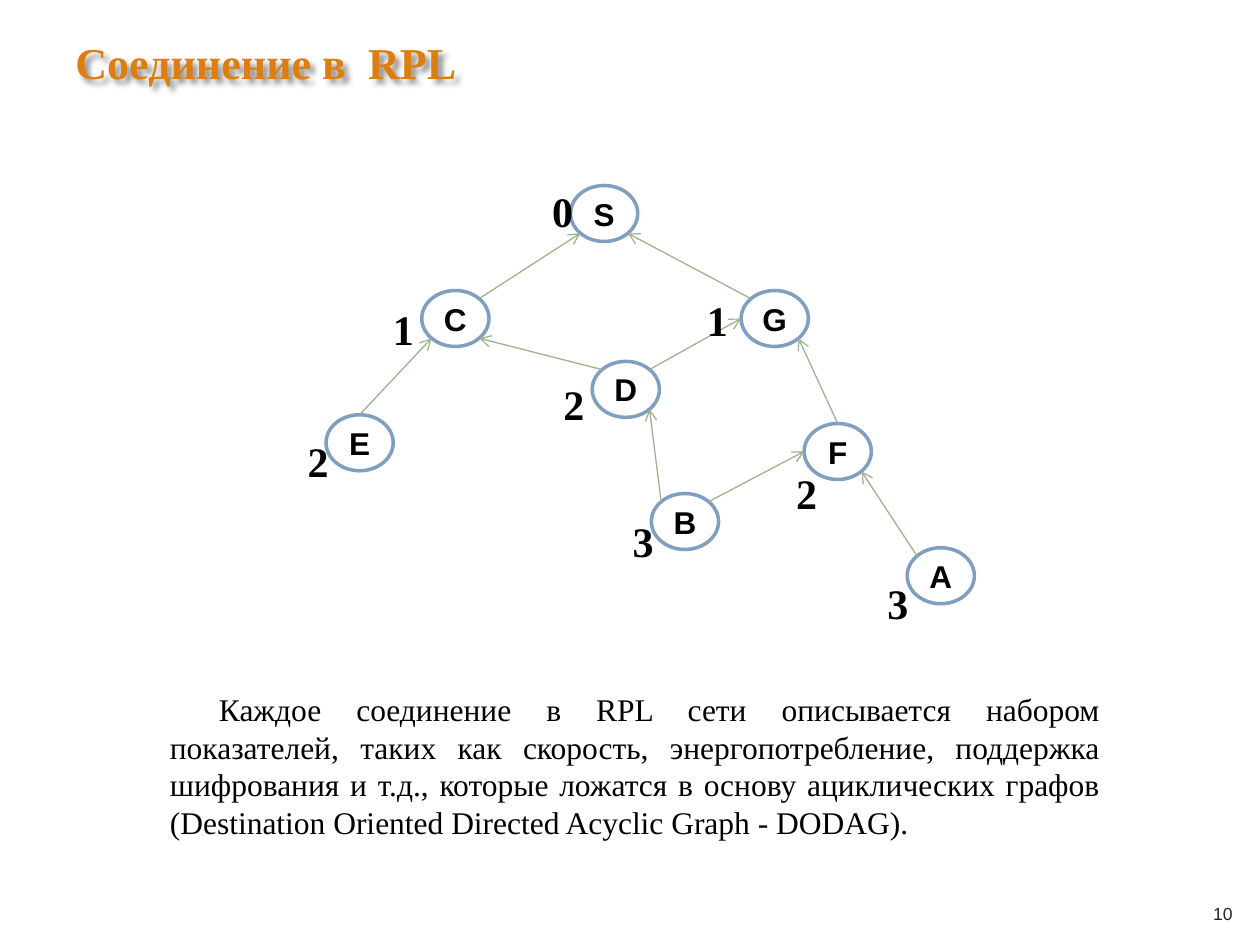
import math
from lxml import etree
from pptx import Presentation, util as u
from pptx.dml.color import RGBColor
from pptx.enum import shapes, text
from pptx.oxml import parse_xml
from pptx.oxml.ns import qn

NS = 'xmlns:a="http://schemas.openxmlformats.org/drawingml/2006/main"'
SERIF, SANS = "Times New Roman", "Arial"
NODE_W, NODE_H = 38.4, 32
NODES = {
    "S": (326, 106), "C": (241, 166), "G": (423.5, 166), "D": (338.4, 206.5),
    "F": (459.5, 242), "A": (518.4, 313), "B": (372.2, 282), "E": (186.3, 237),
}
RANKS = {
    "S": (307.5, 101, "0"), "C": (216.5, 168.5, "1"), "E": (167.8, 244, "2"),
    "B": (353.5, 289.5, "3"), "D": (314, 211.5, "2"), "F": (447, 262, "2"),
    "A": (499, 325, "3"), "G": (396, 163.5, "1"),
}
ANGLES = {"right": 0, "br": 45, "bl": 135, "left": 180, "tl": 225, "top": 270, "tr": 315}
LINKS = [
    ("A", "tl", "F", "br"), ("B", "tl", "D", "br"), ("G", "tl", "S", "br"),
    ("B", "tr", "F", "left"), ("F", "top", "G", "br"), ("D", "tr", "G", "left"),
    ("E", "top", "C", "bl"), ("C", "tr", "S", "bl"), ("D", "tl", "C", "br"),
]
BODY = ("Каждое соединение в RPL сети описывается набором показателей, таких как "
        "скорость, энергопотребление, поддержка шифрования и т.д., которые ложатся "
        "в основу ациклических графов (Destination Oriented Directed Acyclic Graph - DODAG).")


def rgb(value):
    return RGBColor.from_string(value)


def write(sp, content, size=18, font=SERIF, color="000000", bold=False,
          align=text.PP_ALIGN.CENTER, anchor=text.MSO_ANCHOR.MIDDLE,
          wrap=True, insets=(0, 0, 0, 0), indent=0):
    tf = sp.text_frame
    tf.word_wrap = wrap
    tf.vertical_anchor = anchor
    tf.margin_left, tf.margin_top, tf.margin_right, tf.margin_bottom = map(u.Pt, insets)
    p = tf.paragraphs[0]
    p.alignment = align
    if indent:
        pPr = p._p.get_or_add_pPr()
        pPr.set("marL", "0")
        pPr.set("indent", str(u.Pt(indent)))
    r = p.add_run()
    r.text = content
    r.font.size, r.font.name, r.font.bold = u.Pt(size), font, bold
    r.font.color.rgb = rgb(color)


def add_text(s, x, y, w, h, content, **fmt):
    sp = s.shapes.add_textbox(u.Pt(x), u.Pt(y), u.Pt(w), u.Pt(h))
    write(sp, content, **fmt)
    return sp


def add_title(s, content):
    sp = add_text(s, 36, 13, 666, 70, content, size=25.2, color="DD7E0E", bold=True,
                  align=text.PP_ALIGN.LEFT, anchor=text.MSO_ANCHOR.TOP,
                  insets=(7.2, 7, 7.2, 3.6))
    sp._element.spPr.append(parse_xml(
        f'<a:effectLst {NS}><a:outerShdw blurRad="38100" dist="38100" dir="2700000">'
        '<a:srgbClr val="000000"><a:alpha val="43000"/></a:srgbClr>'
        '</a:outerShdw></a:effectLst>'))


def add_node(s, name):
    x, y = NODES[name]
    sp = s.shapes.add_shape(shapes.MSO_SHAPE.FLOWCHART_CONNECTOR,
                            u.Pt(x), u.Pt(y), u.Pt(NODE_W), u.Pt(NODE_H))
    sp.shadow.inherit = False
    sp.fill.solid()
    sp.fill.fore_color.rgb = rgb("FFFFFF")
    sp.line.color.rgb = rgb("809EC2")
    sp.line.width = u.Pt(2)
    write(sp, name, font=SANS, bold=True, wrap=False)


def edge_point(name, side):
    x, y = NODES[name]
    angle = math.radians(ANGLES[side])
    return (u.Pt(x + NODE_W / 2 * (1 + math.cos(angle))),
            u.Pt(y + NODE_H / 2 * (1 + math.sin(angle))))


def add_link(s, start, start_side, end, end_side):
    c = s.shapes.add_connector(shapes.MSO_CONNECTOR.STRAIGHT,
                               *edge_point(start, start_side), *edge_point(end, end_side))
    c.line.color.rgb = rgb("A1B28E")
    c.line.width = u.Pt(0.75)
    etree.SubElement(c.line._get_or_add_ln(), qn("a:tailEnd"), type="arrow")
    etree.SubElement(c._element.spPr, qn("a:effectLst"))


def main():
    prs = Presentation()
    prs.slide_width, prs.slide_height = u.Pt(720), u.Pt(540)
    s = prs.slides.add_slide(prs.slide_layouts[6])
    add_title(s, "Соединение в  RPL")
    add_text(s, 680.4, 507.6, 36.7, 28.8, "10", size=10, font=SANS, color="262626")
    for name in NODES:
        add_node(s, name)
    for link in LINKS:
        add_link(s, *link)
    for x, y, rank in RANKS.values():
        add_text(s, x, y, 18, 38.9, rank, size=24, bold=True, wrap=False,
                 insets=(8, 0, 0, 0))
    add_text(s, 90, 390.2, 545.8, 94.3, BODY, align=text.PP_ALIGN.JUSTIFY,
             insets=(7.2, 3.6, 7.2, 3.6), indent=28)
    prs.save("out.pptx")


if __name__ == "__main__":
    main()
